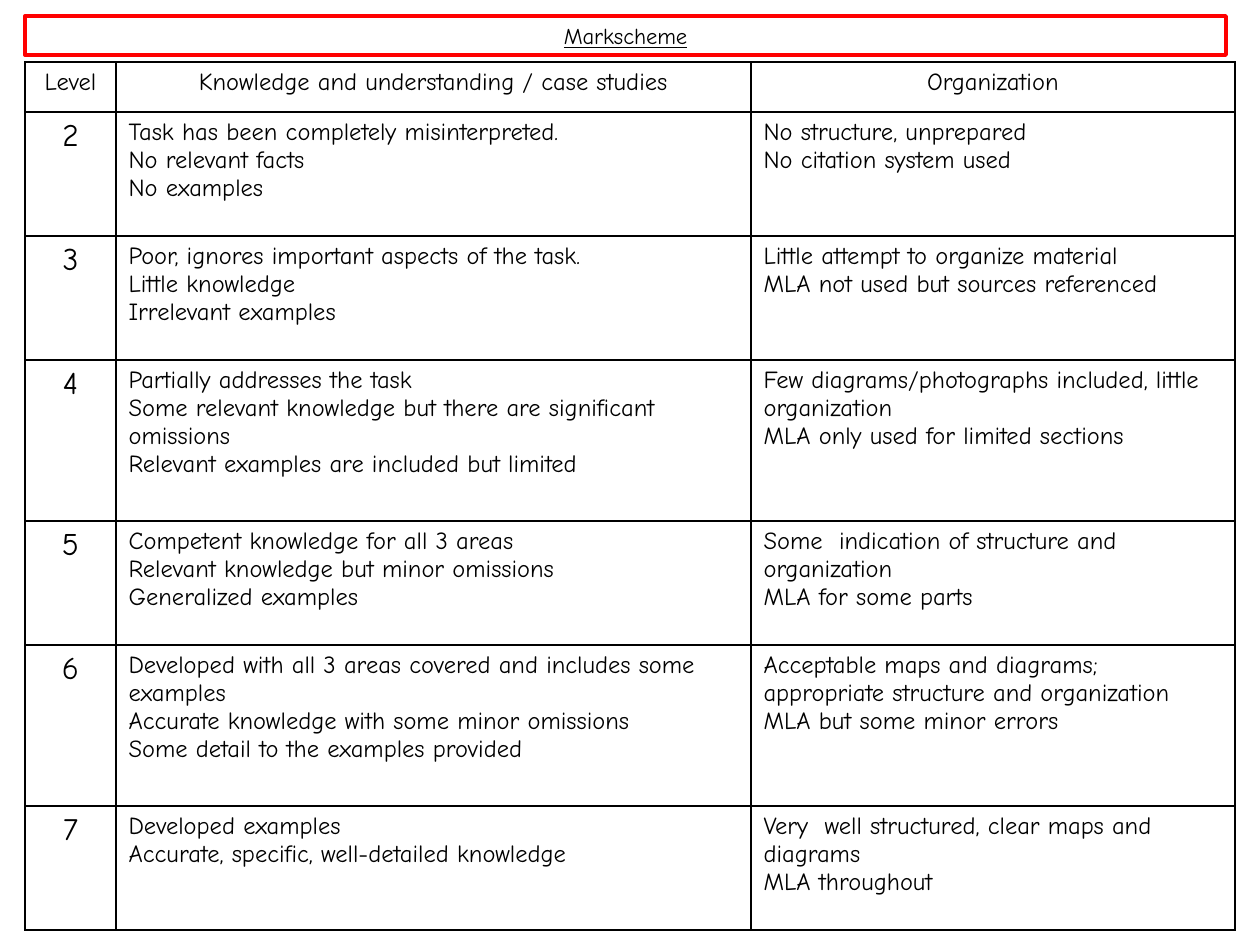
"""Build a one-slide assessment markscheme with a framed title and a level table."""
import dataclasses

import lxml.etree
import pptx
import pptx.dml.color
import pptx.enum.text
import pptx.oxml.ns
import pptx.presentation
import pptx.slide
import pptx.table
import pptx.text.text
import pptx.util

PX_PER_INCH = 126
FONT = "Comic Neue"
BLACK = pptx.dml.color.RGBColor(0x00, 0x00, 0x00)
RED = pptx.dml.color.RGBColor(0xFF, 0x00, 0x00)
CENTER = pptx.enum.text.PP_ALIGN.CENTER
LEFT = pptx.enum.text.PP_ALIGN.LEFT

HEADINGS = ("Level", "Knowledge and understanding / case studies", "Organization")
COLUMN_WIDTHS = (91, 635, 484)
HEADING_HEIGHT = 50
SHORT_ROW = 124
TALL_ROW = 161


@dataclasses.dataclass(frozen=True)
class Band:
    level: int
    knowledge: tuple[str, ...]
    organization: tuple[str, ...]
    height: int = SHORT_ROW


BANDS = (
    Band(
        2,
        ("Task has been completely misinterpreted.", "No relevant facts", "No examples"),
        ("No structure, unprepared", "No citation system used"),
    ),
    Band(
        3,
        ("Poor, ignores important aspects of the task.", "Little knowledge", "Irrelevant examples"),
        ("Little attempt to organize material", "MLA not used but sources referenced"),
    ),
    Band(
        4,
        (
            "Partially addresses the task",
            "Some relevant knowledge but there are significant omissions",
            "Relevant examples are included but limited",
        ),
        (
            "Few diagrams/photographs included, little organization",
            "MLA only used for limited sections",
        ),
        TALL_ROW,
    ),
    Band(
        5,
        (
            "Competent knowledge for all 3 areas",
            "Relevant knowledge but minor omissions",
            "Generalized examples",
        ),
        ("Some  indication of structure and organization", "MLA for some parts"),
    ),
    Band(
        6,
        (
            "Developed with all 3 areas covered and includes some examples",
            "Accurate knowledge with some minor omissions",
            "Some detail to the examples provided",
        ),
        (
            "Acceptable maps and diagrams; appropriate structure and organization",
            "MLA but some minor errors",
        ),
        TALL_ROW,
    ),
    Band(
        7,
        ("Developed examples", "Accurate, specific, well-detailed knowledge"),
        ("Very  well structured, clear maps and diagrams", "MLA throughout"),
    ),
)


def px(length: int) -> pptx.util.Emu:
    return pptx.util.Emu(round(length * pptx.util.Inches(1) / PX_PER_INCH))


def write(
    frame: pptx.text.text.TextFrame,
    text: str,
    size: float,
    alignment: pptx.enum.text.PP_ALIGN,
    underline: bool = False,
) -> None:
    frame.text = text
    for paragraph in frame.paragraphs:
        paragraph.alignment = alignment
        for run in paragraph.runs:
            run.font.name = FONT
            run.font.size = pptx.util.Pt(size)
            run.font.bold = False
            run.font.underline = underline
            run.font.color.rgb = BLACK


def add_borders(cell: pptx.table._Cell) -> None:
    properties = cell._tc.get_or_add_tcPr()
    qn = pptx.oxml.ns.qn
    for position, side in enumerate(("a:lnL", "a:lnR", "a:lnT", "a:lnB")):
        border = lxml.etree.Element(qn(side), w=str(pptx.util.Pt(1)))
        fill = lxml.etree.SubElement(border, qn("a:solidFill"))
        lxml.etree.SubElement(fill, qn("a:srgbClr"), val=str(BLACK))
        properties.insert(position, border)


def fill_cell(
    cell: pptx.table._Cell, text: str, size: float, alignment: pptx.enum.text.PP_ALIGN
) -> None:
    write(cell.text_frame, text, size, alignment)
    cell.fill.background()
    add_borders(cell)


def add_title(slide: pptx.slide.Slide) -> None:
    heading = slide.shapes.title
    heading.left, heading.top, heading.width, heading.height = map(px, (25, 16, 1201, 39))
    heading.line.color.rgb = RED
    heading.line.width = pptx.util.Pt(2.25)
    frame = heading.text_frame
    frame.word_wrap = True
    frame.auto_size = pptx.enum.text.MSO_AUTO_SIZE.NONE
    frame.vertical_anchor = pptx.enum.text.MSO_ANCHOR.MIDDLE
    write(frame, "Markscheme", 12.9, CENTER, underline=True)


def add_markscheme(slide: pptx.slide.Slide) -> None:
    heights = (HEADING_HEIGHT, *(band.height for band in BANDS))
    markscheme = slide.shapes.add_table(
        len(heights),
        len(HEADINGS),
        px(25),
        px(62),
        px(sum(COLUMN_WIDTHS)),
        px(sum(heights)),
    ).table
    markscheme.first_row = False
    markscheme.horz_banding = False
    for column, width in zip(markscheme.columns, COLUMN_WIDTHS):
        column.width = px(width)
    for row, height in zip(markscheme.rows, heights):
        row.height = px(height)
    for column, heading in enumerate(HEADINGS):
        fill_cell(markscheme.cell(0, column), heading, 14, CENTER)
    for row, band in enumerate(BANDS, start=1):
        fill_cell(markscheme.cell(row, 0), str(band.level), 18, CENTER)
        for column, criteria in enumerate((band.knowledge, band.organization), start=1):
            fill_cell(markscheme.cell(row, column), "\n".join(criteria), 14, LEFT)


def main() -> None:
    presentation = pptx.Presentation()
    presentation.slide_width = pptx.util.Inches(10)
    presentation.slide_height = pptx.util.Inches(7.5)
    slide = presentation.slides.add_slide(presentation.slide_layouts.get_by_name("Title Only"))
    add_title(slide)
    add_markscheme(slide)
    presentation.save("out.pptx")


if __name__ == "__main__":
    main()
